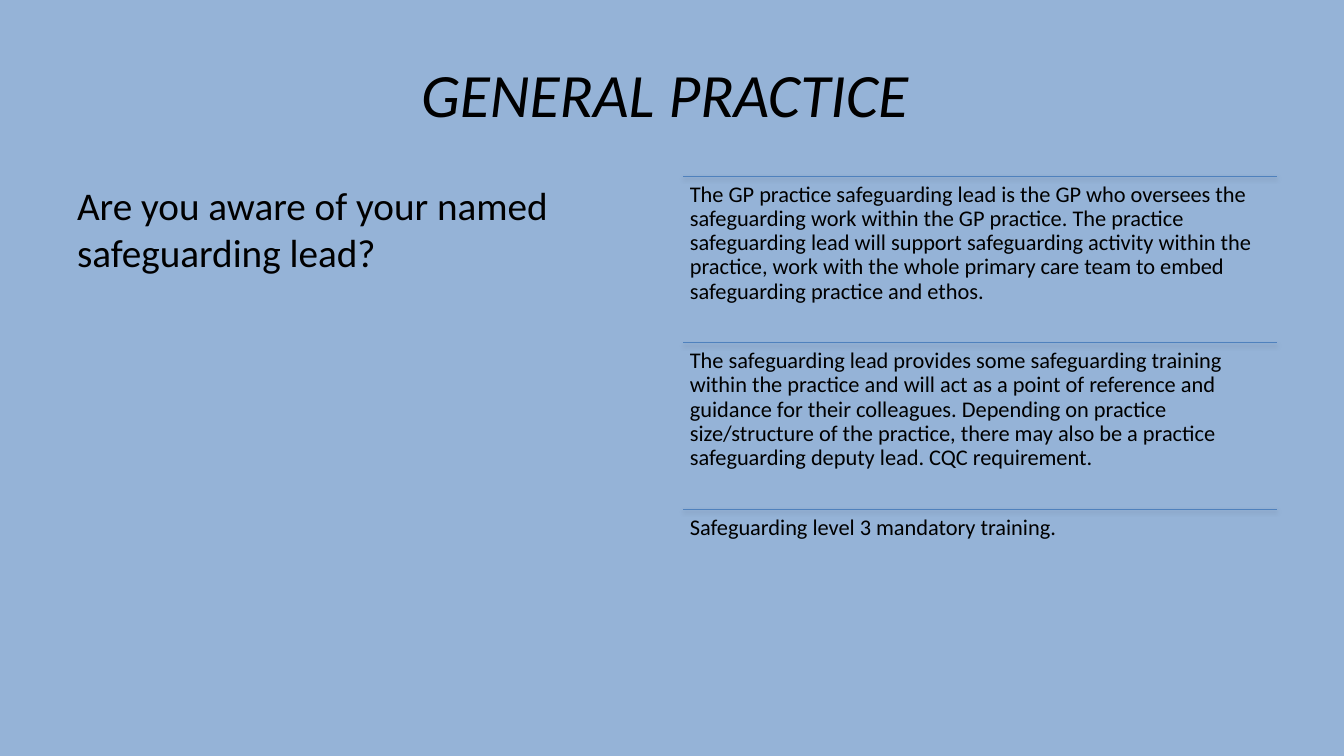
import pptx
import pptx.dml.color
import pptx.enum.shapes
import pptx.enum.text
import pptx.oxml
import pptx.oxml.ns
import pptx.util

Pt = pptx.util.Pt
ALIGN = pptx.enum.text.PP_ALIGN
ANCHOR = pptx.enum.text.MSO_ANCHOR

DUTIES = [
    "The GP practice safeguarding lead is the GP who oversees the safeguarding work "
    "within the GP practice. The practice safeguarding lead will support safeguarding "
    "activity within the practice, work with the whole primary care team to embed "
    "safeguarding practice and ethos.",
    "The safeguarding lead provides some safeguarding training within the practice and "
    "will act as a point of reference and guidance for their colleagues. Depending on "
    "practice size/structure of the practice, there may also be a practice safeguarding "
    "deputy lead. CQC requirement.",
    "Safeguarding level 3 mandatory training.",
]
SHADOW = (
    f'<a:effectLst {pptx.oxml.ns.nsdecls("a")}>'
    '<a:outerShdw blurRad="40000" dist="23000" dir="5400000" rotWithShape="0">'
    '<a:srgbClr val="000000"><a:alpha val="35000"/></a:srgbClr>'
    '</a:outerShdw></a:effectLst>'
)


def color(value):
    """Return the colour for a hex string."""
    return pptx.dml.color.RGBColor.from_string(value)


def add_text(s, box, text, size, align=ALIGN.LEFT, anchor=ANCHOR.TOP, italic=False):
    """Add a wrapped text box and return its text frame."""
    tf = s.shapes.add_textbox(*map(Pt, box)).text_frame
    tf.word_wrap = True
    tf.vertical_anchor = anchor
    tf.text = text
    p = tf.paragraphs[0]
    p.alignment = align
    font = p.runs[0].font
    font.name, font.size, font.italic = "Calibri", Pt(size), italic
    font.color.rgb = color("000000")
    return tf


def add_rule(s, x, y, width):
    """Draw a horizontal rule with a soft shadow."""
    line = s.shapes.add_connector(
        pptx.enum.shapes.MSO_CONNECTOR.STRAIGHT, Pt(x), Pt(y), Pt(x + width), Pt(y))
    line.line.color.rgb = color("4F81BD")
    line.line.width = Pt(0.75)
    line._element.spPr.append(pptx.oxml.parse_xml(SHADOW))


def add_title(s, box):
    """Add the slide title."""
    tf = add_text(s, box, "GENERAL PRACTICE ", 44, ALIGN.CENTER, ANCHOR.MIDDLE, True)
    tf.paragraphs[0].space_after = Pt(6)


def add_question(s, box):
    """Add the question in the left column."""
    add_text(s, box, "Are you aware of your named safeguarding lead?", 28)


def add_duties(s, box):
    """Stack the duties in equal rows, each under a rule."""
    x, y, width, height = box
    row = height / len(DUTIES)
    for i, duty in enumerate(DUTIES):
        top = y + i * row
        add_rule(s, x, top, width)
        tf = add_text(s, (x, top, width, row), duty, 16)
        tf.margin_left = tf.margin_top = tf.margin_right = tf.margin_bottom = Pt(4.8)
        tf.paragraphs[0].line_spacing = 0.9


def main():
    """Build and save the slide."""
    prs = pptx.Presentation()
    prs.slide_width, prs.slide_height = Pt(960), Pt(540)
    s = prs.slides.add_slide(prs.slide_layouts[6])
    s.background.fill.solid()
    s.background.fill.fore_color.rgb = color("95B3D7")
    add_title(s, (48, 21.6, 864, 90))
    add_question(s, (48, 126, 424, 356.4))
    add_duties(s, (488, 126, 424, 356.4))
    prs.save("out.pptx")


if __name__ == "__main__":
    main()
